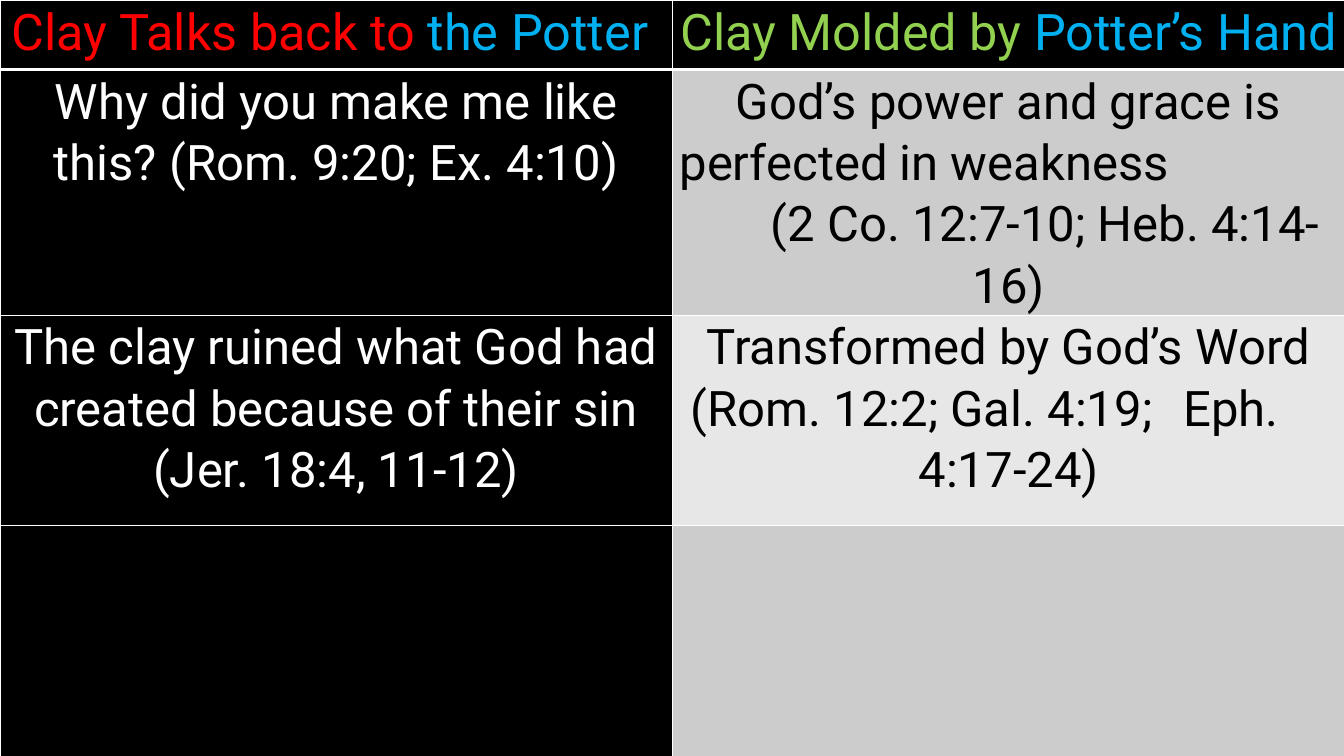
from lxml.etree import SubElement
from pptx import Presentation
from pptx.dml.color import RGBColor
from pptx.enum.text import PP_ALIGN as Align
from pptx.oxml.ns import qn
from pptx.util import Inches, Pt

BLACK, WHITE, BLUE = "000000", "FFFFFF", "00B0F0"
COLS = [6.67, 6.67]
ROWS = [0.69, 2.08, 2.08, 2.67]
FILLS = [(BLACK, BLACK), (BLACK, "CCCCCC"), (BLACK, "E7E7E7"), (BLACK, "CCCCCC")]

HEADERS = [
    [("Clay Talks back to ", "FF0000"), ("the Potter ", BLUE)],
    [("Clay Molded by ", "92D050"), ("Potter’s Hand", BLUE)],
]
COMPLAINTS = [
    "Why did you make me like this? (Rom. 9:20; Ex. 4:10)",
    "The clay ruined what God had created because of their sin (Jer. 18:4, 11-12)",
]
# Each answer line: text, alignment, first-line indent, tab stop
ANSWERS = [
    [("God’s power and grace is", Align.CENTER, 0, None),
     ("perfected in weakness", Align.LEFT, 0, None),
     ("(2 Co. 12:7-10; Heb. 4:14-16)", Align.CENTER, 0.73, None)],
    [("Transformed by God’s Word", Align.CENTER, 0, None),
     ("(Rom. 12:2; Gal. 4:19;\tEph.", Align.LEFT, 0.11, 5.42),
     ("4:17-24)", Align.CENTER, 0, None)],
]


def rgb(color):
    return RGBColor.from_string(color)


def add_border(cell, side, width):
    ln = SubElement(cell._tc.get_or_add_tcPr(), qn(f"a:ln{side}"), w=str(Pt(width)))
    fill = SubElement(ln, qn("a:solidFill"))
    SubElement(fill, qn("a:srgbClr"), val=WHITE)


def style_cell(cell, color, bottom):
    cell.margin_left = cell.margin_right = Inches(0.07)
    cell.margin_top = cell.margin_bottom = 0
    for side, width in (("L", 1), ("R", 1), ("T", 1), ("B", bottom)):
        add_border(cell, side, width)
    cell.fill.solid()
    cell.fill.fore_color.rgb = rgb(color)


def format_paragraph(p, align=Align.CENTER, indent=0, tab=None):
    p.alignment = align
    p.line_spacing = 1.07
    pPr = p._p.get_or_add_pPr()
    if indent:
        pPr.set("marL", "0")
        pPr.set("indent", str(Inches(indent)))
    if tab:
        tabs = SubElement(pPr, qn("a:tabLst"))
        SubElement(tabs, qn("a:tab"), pos=str(Inches(tab)), algn="l")


def format_run(r, size, color):
    r.font.name = "Roboto"
    r.font.size = Pt(size)
    r.font.bold = False
    r.font.color.rgb = rgb(color)


def write_header(cell, parts):
    p = cell.text_frame.paragraphs[0]
    format_paragraph(p)
    for text, color in parts:
        r = p.add_run()
        r.text = text
        format_run(r, 36, color)


def write_body(cell, lines, color):
    tf = cell.text_frame
    tf.text = "\n".join(line[0] for line in lines)
    for p, (_, align, indent, tab) in zip(tf.paragraphs, lines):
        format_paragraph(p, align, indent, tab)
        for r in p.runs:
            format_run(r, 35, color)


def add_comparison_table(slide):
    frame = slide.shapes.add_table(len(ROWS), len(COLS), 0, 0,
                                   Inches(sum(COLS)), Inches(sum(ROWS)))
    table = frame.table
    table.horz_banding = False
    for col, width in zip(table.columns, COLS):
        col.width = Inches(width)
    for row, height in zip(table.rows, ROWS):
        row.height = Inches(height)
    for i, fills in enumerate(FILLS):
        for j, color in enumerate(fills):
            style_cell(table.cell(i, j), color, bottom=3 if i == 0 else 1)
    return table


def main():
    prs = Presentation()
    prs.slide_width, prs.slide_height = Inches(13.33), Inches(7.5)
    slide = prs.slides.add_slide(prs.slide_layouts[6])
    slide.background.fill.solid()
    slide.background.fill.fore_color.rgb = rgb(BLACK)

    # Header row, then complaints on the left and answers on the right
    table = add_comparison_table(slide)
    for j, parts in enumerate(HEADERS):
        write_header(table.cell(0, j), parts)
    for i, (complaint, answer) in enumerate(zip(COMPLAINTS, ANSWERS), start=1):
        write_body(table.cell(i, 0), [(complaint, Align.CENTER, 0, None)], WHITE)
        write_body(table.cell(i, 1), answer, BLACK)

    prs.save("out.pptx")


if __name__ == "__main__":
    main()
